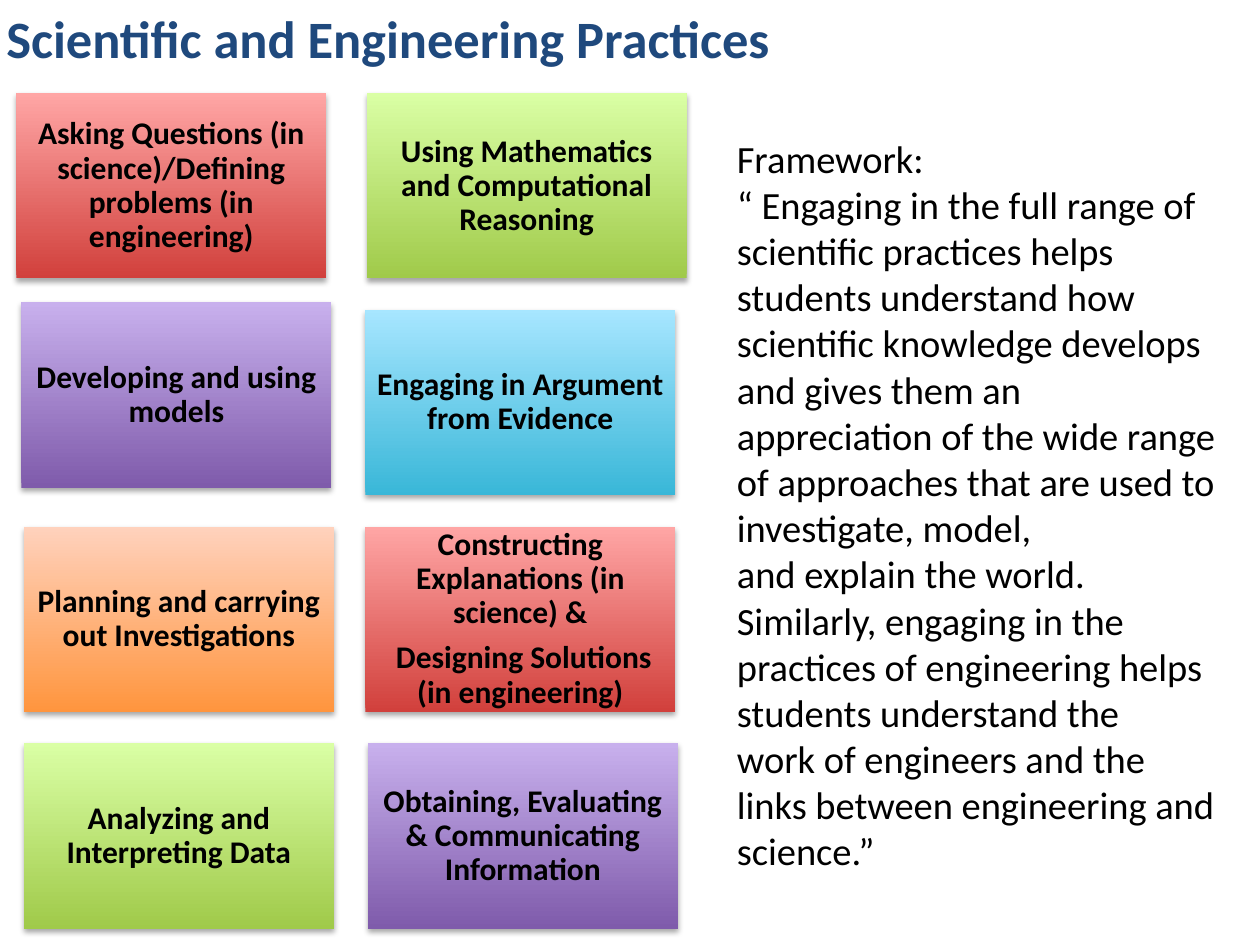
import pptx
import pptx.util
from lxml import etree
from pptx.dml.color import RGBColor
from pptx.enum.shapes import MSO_SHAPE
from pptx.enum.text import MSO_ANCHOR, PP_ALIGN
from pptx.oxml.ns import qn

COLORS = {"title": "1F497D", "text": "000000", "shadow": "000000"}
# Bottom and top colour of each card gradient
GRADIENTS = {
    "red": ("D1403C", "FFA6A5"),
    "green": ("A0CA4A", "DAFFA5"),
    "purple": ("7F5BAB", "C8B0ED"),
    "blue": ("39B7D8", "A7E6FF"),
    "orange": ("FF953E", "FFD2BD"),
}

# Card grid, in inches
LEFT, TOP = 0.19, 0.74
COL_STEP, ROW_STEP = 2.71, 1.72
CARD_W, CARD_H = 2.46, 1.47

# Column, row, gradient, paragraphs, offset from the grid (x, y, extra width)
CARDS = [
    (0, 0, "red", ["Asking Questions (in science)/Defining problems (in engineering)"], (-0.06, 0, 0)),
    (1, 0, "green", ["Using Mathematics and Computational Reasoning"], (0.01, 0, 0.08)),
    (0, 1, "purple", ["Developing and using models"], (-0.02, -0.06, 0)),
    (1, 1, "blue", ["Engaging in Argument from Evidence"], (0, 0, 0)),
    (0, 2, "orange", ["Planning and carrying out Investigations"], (0, 0, 0)),
    (1, 2, "red", ["Constructing Explanations (in science) &",
                   " Designing Solutions (in engineering)"], (0, 0, 0)),
    (0, 3, "green", ["Analyzing and Interpreting Data"], (0, 0, 0)),
    (1, 3, "purple", ["Obtaining, Evaluating & Communicating Information"], (0.02, 0, 0)),
]

QUOTE = [
    "Framework:",
    "“ Engaging in the full range of scientific practices helps students understand how scientific knowledge develops",
    "and gives them an appreciation of the wide range of approaches that are used to investigate, model,",
    "and explain the world.",
    "Similarly, engaging in the practices of engineering helps students understand the",
    "work of engineers and the links between engineering and science.”",
]


class Deck:
    font = "Calibri"

    def __init__(self, width, height):
        self.prs = pptx.Presentation()
        self.prs.slide_width = pptx.util.Inches(width)
        self.prs.slide_height = pptx.util.Inches(height)
        self.s = self.prs.slides.add_slide(self.prs.slide_layouts[6])

    def set_text(self, sp, lines, size, color="text", bold=False, align=PP_ALIGN.LEFT,
                 anchor=MSO_ANCHOR.TOP, inset=None):
        tf = sp.text_frame
        tf.word_wrap = True
        tf.vertical_anchor = anchor
        if inset is not None:
            tf.margin_left = tf.margin_right = pptx.util.Inches(inset)
            tf.margin_top = tf.margin_bottom = pptx.util.Inches(inset)
        tf.text = "\n".join(lines)
        for p in tf.paragraphs:
            p.alignment = align
            for r in p.runs:
                r.font.name = self.font
                r.font.size = pptx.util.Pt(size)
                r.font.bold = bold
                r.font.color.rgb = RGBColor.from_string(COLORS[color])

    def text(self, box, lines, size, **style):
        sp = self.s.shapes.add_textbox(*map(pptx.util.Inches, box))
        self.set_text(sp, lines, size, **style)

    def shadow(self, sp):
        sp.shadow.inherit = False
        effects = sp._element.spPr.find(qn("a:effectLst"))
        outer = etree.SubElement(effects, qn("a:outerShdw"), blurRad="40000",
                                 dist="23000", dir="5400000", rotWithShape="0")
        color = etree.SubElement(outer, qn("a:srgbClr"), val=COLORS["shadow"])
        etree.SubElement(color, qn("a:alpha"), val="35000")

    def card(self, col, row, gradient, lines, offset):
        dx, dy, extra = offset
        box = (LEFT + col * COL_STEP + dx, TOP + row * ROW_STEP + dy, CARD_W + extra, CARD_H)
        sp = self.s.shapes.add_shape(MSO_SHAPE.RECTANGLE, *map(pptx.util.Inches, box))
        sp.line.fill.background()
        sp.fill.gradient()
        sp.fill.gradient_angle = 90
        for stop, color, position in zip(sp.fill.gradient_stops, GRADIENTS[gradient], (0, 1)):
            stop.color.rgb = RGBColor.from_string(color)
            stop.position = position
        self.shadow(sp)
        self.set_text(sp, lines, 18, bold=True, align=PP_ALIGN.CENTER,
                      anchor=MSO_ANCHOR.MIDDLE, inset=0.07)
        for p in sp.text_frame.paragraphs:
            p.line_spacing = 0.9
            p.space_after = pptx.util.Pt(6.3)


def main():
    deck = Deck(10, 7.5)
    # Title
    deck.text((0, 0, 9.89, 0.59), ["Scientific and Engineering Practices"], 30,
              color="title", bold=True, anchor=MSO_ANCHOR.MIDDLE, inset=0.05)
    # Practice cards
    for card in CARDS:
        deck.card(*card)
    # Framework quotation
    deck.text((5.75, 1.02, 4.05, 6.02), QUOTE, 22)
    deck.prs.save("out.pptx")


if __name__ == "__main__":
    main()
